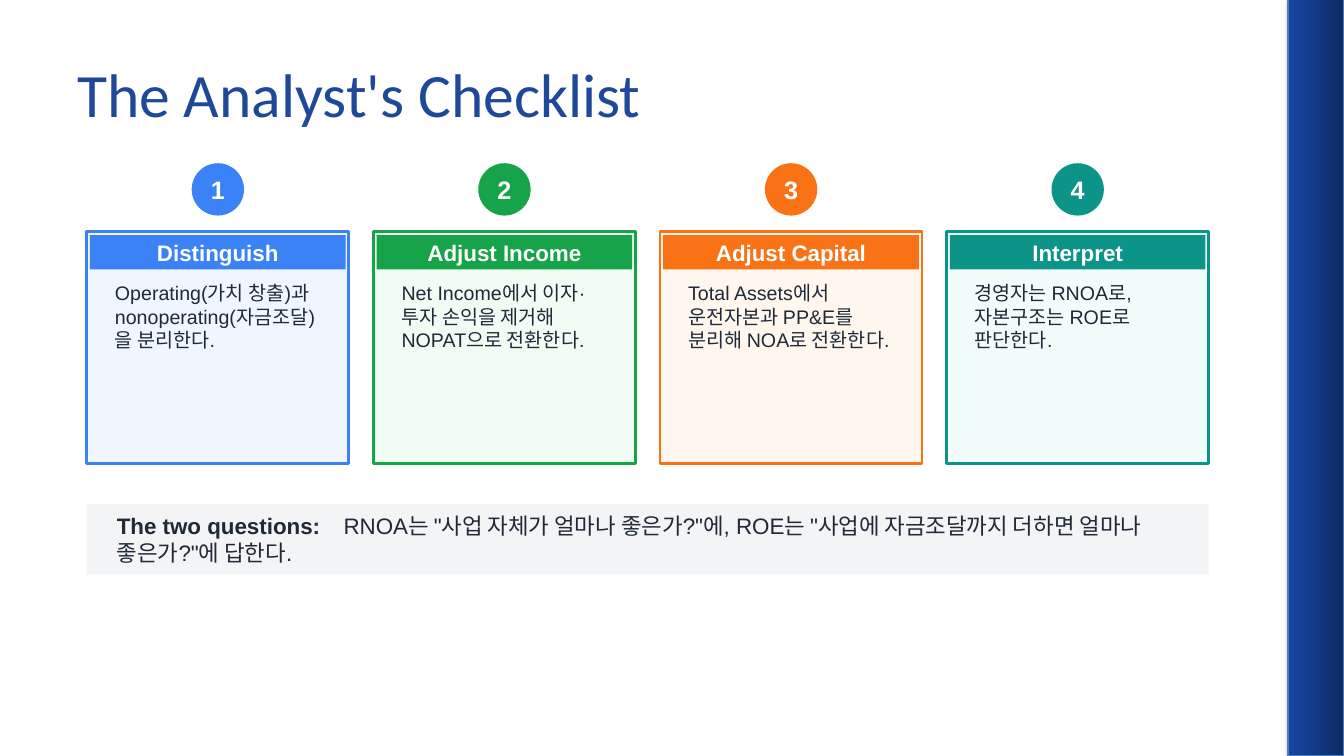
"""Build the Analyst's Checklist slide: four numbered cards above a summary bar."""
from copy import deepcopy
from dataclasses import dataclass

from lxml import etree
from pptx import Presentation
from pptx import util as u
from pptx.dml.color import RGBColor
from pptx.enum import shapes, text
from pptx.oxml.ns import qn

COLOURS = {
    "white": "FFFFFF", "title": "1F4899", "ink": "1F2937", "bar": "F3F4F6",
    "blue": "3B82F6", "pale blue": "EFF6FF",
    "green": "16A34A", "pale green": "F0FDF4",
    "orange": "F97316", "pale orange": "FFF7ED",
    "teal": "0D9488", "pale teal": "F0FDFA",
    "side dark": "0D2960", "side middle": "123A89", "side light": "1645A2",
    "side edge": "4B7EBC", "shadow": "000000",
}
LEFT, TOTAL_WIDTH = 62, 801.4
CARD_TOP, CARD_SIZE = 165.6, 187.2
CARD_HEIGHT = 165.6
HEADER_INSET, HEADER_HEIGHT = 2.3, 24.5
BADGE_TOP, BADGE_SIZE = 116.6, 37.4
BODY_INSET, BODY_TOP, BODY_HEIGHT = 13, 197.3, 128
BAR_TOP, BAR_HEIGHT, BAR_INSET = 360, 50.4, 14.4
QUESTION_TAB = 162


@dataclass
class Box:
    left: float
    top: float
    width: float
    height: float

    def lengths(self) -> list:
        return [u.Pt(side) for side in (self.left, self.top, self.width, self.height)]


@dataclass
class Card:
    heading: str
    body: str
    colour: str


CARDS = [
    Card("Distinguish", "Operating(가치 창출)과 nonoperating(자금조달)을 분리한다.", "blue"),
    Card("Adjust Income", "Net Income에서 이자·투자 손익을 제거해 NOPAT으로 전환한다.", "green"),
    Card("Adjust Capital", "Total Assets에서 운전자본과 PP&E를 분리해 NOA로 전환한다.", "orange"),
    Card("Interpret", "경영자는 RNOA로, 자본구조는 ROE로 판단한다.", "teal"),
]
QUESTION_LABEL = "The two questions:"
QUESTION_ANSWER = ('\tRNOA는 "사업 자체가 얼마나 좋은가?"에, '
                   'ROE는 "사업에 자금조달까지 더하면 얼마나 좋은가?"에 답한다.')


def rgb(name: str) -> RGBColor:
    return RGBColor.from_string(COLOURS[name])


def write(shape, content: str, *, size: float, colour: str = "ink", font: str = "Arial",
          bold: bool = False, centred: bool = False, middle: bool = True):
    frame = shape.text_frame
    frame.word_wrap = True
    frame.vertical_anchor = text.MSO_ANCHOR.MIDDLE if middle else text.MSO_ANCHOR.TOP
    para = frame.paragraphs[0]
    para.alignment = text.PP_ALIGN.CENTER if centred else text.PP_ALIGN.LEFT
    span = para.add_run()
    span.text = content
    span.font.name, span.font.size, span.font.bold = font, u.Pt(size), bold
    span.font.color.rgb = rgb(colour)
    return para


def add_block(page, box: Box, fill: str, line: str = "",
              kind=shapes.MSO_SHAPE.RECTANGLE, weight: float = 2):
    shape = page.shapes.add_shape(kind, *box.lengths())
    shape.shadow.inherit = False
    shape.fill.solid()
    shape.fill.fore_color.rgb = rgb(fill)
    if line:
        shape.line.color.rgb = rgb(line)
        shape.line.width = u.Pt(weight)
    else:
        shape.line.fill.background()
    return shape


def add_text(page, box: Box, content: str, **style):
    return write(page.shapes.add_textbox(*box.lengths()), content, **style)


def add_side_band(page) -> None:
    band = add_block(page, Box(920, 0, 40, 540), "side dark", "side edge", weight=0.75)
    band.fill.gradient()
    band.fill.gradient_angle = 180
    properties = band._element.spPr
    first = properties.find(qn("a:gradFill")).find(qn("a:gsLst"))[0]
    first.addnext(deepcopy(first))
    names = ("side dark", "side middle", "side light")
    for index, (stop, name) in enumerate(zip(band.fill.gradient_stops, names)):
        stop.position = index / 2
        stop.color.rgb = rgb(name)
    shadow = etree.SubElement(properties.find(qn("a:effectLst")), qn("a:outerShdw"),
                              blurRad=str(u.Pt(3.1)), dist=str(u.Pt(1.8)),
                              dir="5400000", rotWithShape="0")
    tint = etree.SubElement(shadow, qn("a:srgbClr"), val=COLOURS["shadow"])
    etree.SubElement(tint, qn("a:alpha"), val="35000")


def add_card(page, number: int, card: Card, left: float) -> None:
    add_block(page, Box(left, CARD_TOP, CARD_SIZE, CARD_HEIGHT),
              f"pale {card.colour}", card.colour)
    header = add_block(page, Box(left + HEADER_INSET, CARD_TOP + HEADER_INSET,
                                 CARD_SIZE - 2 * HEADER_INSET, HEADER_HEIGHT), card.colour)
    write(header, card.heading, size=16, colour="white", bold=True, centred=True)
    add_text(page, Box(left + BODY_INSET, BODY_TOP, CARD_SIZE - 2 * BODY_INSET, BODY_HEIGHT),
             card.body, size=14, middle=False)
    badge = add_block(page, Box(left + (CARD_SIZE - BADGE_SIZE) / 2, BADGE_TOP,
                                BADGE_SIZE, BADGE_SIZE),
                      card.colour, kind=shapes.MSO_SHAPE.OVAL)
    write(badge, str(number), size=18, colour="white", bold=True, centred=True)


def add_questions(page) -> None:
    add_block(page, Box(LEFT, BAR_TOP, TOTAL_WIDTH, BAR_HEIGHT), "bar")
    para = add_text(page, Box(LEFT + BAR_INSET, BAR_TOP, TOTAL_WIDTH - 2 * BAR_INSET, BAR_HEIGHT),
                    QUESTION_LABEL, size=16, bold=True)
    tabs = etree.SubElement(para._p.get_or_add_pPr(), qn("a:tabLst"))
    etree.SubElement(tabs, qn("a:tab"), pos=str(u.Pt(QUESTION_TAB)), algn="l")
    span = para.add_run()
    span.text = QUESTION_ANSWER
    span.font.name, span.font.size, span.font.bold = "Arial", u.Pt(16), False
    span.font.color.rgb = rgb("ink")


def main() -> None:
    deck = Presentation()
    deck.slide_width, deck.slide_height = u.Pt(960), u.Pt(540)
    page = deck.slides.add_slide(deck.slide_layouts[6])
    add_side_band(page)
    add_text(page, Box(48, 21.6, 872, 90), "The Analyst's Checklist",
             size=44, colour="title", font="Calibri")
    step = (TOTAL_WIDTH - CARD_SIZE) / (len(CARDS) - 1)
    for index, card in enumerate(CARDS):
        add_card(page, index + 1, card, LEFT + index * step)
    add_questions(page)
    deck.save("out.pptx")


if __name__ == "__main__":
    main()
